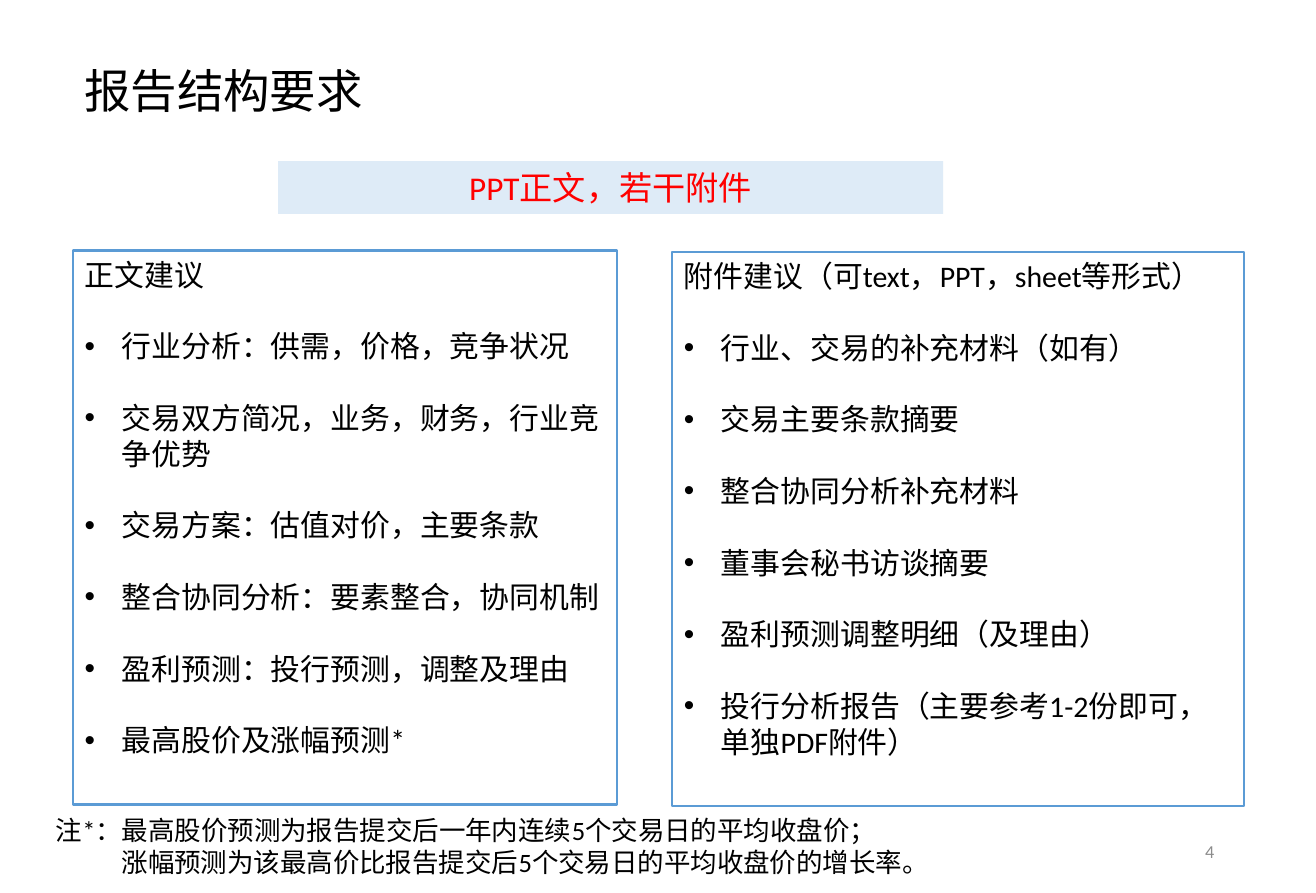
from dataclasses import dataclass

from lxml.etree import SubElement
from pptx import Presentation
from pptx.dml.color import RGBColor
from pptx.enum.shapes import MSO_SHAPE
from pptx.enum.text import MSO_ANCHOR, PP_ALIGN
from pptx.oxml.ns import qn
from pptx.slide import Slide
from pptx.text.text import _Paragraph as Para
from pptx.util import Cm, Pt

INDENT = 0.79


@dataclass
class Block:
    left: float
    top: float
    width: float
    height: float
    lines: list[str]
    size: int
    color: str = "000000"
    font: str = "Calibri"
    align: PP_ALIGN = PP_ALIGN.LEFT
    anchor: MSO_ANCHOR = MSO_ANCHOR.TOP
    fill: str = ""
    edge: str = ""
    listed: bool = False
    shift: float = 0


BLOCKS = [
    Block(1.55, 1.19, 23.14, 1.45, ["报告结构要求"], 28, font="Arial"),
    Block(19.79, 17.6, 6.3, 1.02, ["4"], 11, "8C8C8C",
          align=PP_ALIGN.RIGHT, anchor=MSO_ANCHOR.MIDDLE),
    Block(1.55, 5.33, 11.58, 11.79, [
        "正文建议",
        "行业分析：供需，价格，竞争状况",
        "交易双方简况，业务，财务，行业竞争优势",
        "交易方案：估值对价，主要条款",
        "整合协同分析：要素整合，协同机制",
        "盈利预测：投行预测，调整及理由",
        "最高股价及涨幅预测*",
    ], 18, edge="5B9BD5", listed=True),
    Block(5.92, 3.43, 14.15, 1.12, ["PPT正文，若干附件"], 20, "FF0000",
          align=PP_ALIGN.CENTER, fill="DEEBF7"),
    Block(14.3, 5.36, 12.17, 11.79, [
        "附件建议（可text，PPT，sheet等形式）",
        "行业、交易的补充材料（如有）",
        "交易主要条款摘要",
        "整合协同分析补充材料",
        "董事会秘书访谈摘要",
        "盈利预测调整明细（及理由）",
        "投行分析报告（主要参考1-2份即可，单独PDF附件）",
    ], 18, edge="5B9BD5", listed=True),
    Block(0.94, 17.2, 19.25, 1.63, [
        "注*：最高股价预测为报告提交后一年内连续5个交易日的平均收盘价；",
        "涨幅预测为该最高价比报告提交后5个交易日的平均收盘价的增长率。",
    ], 16, shift=1.4),
]


def paint(code: str) -> RGBColor:
    return RGBColor.from_string(code)


def indent(para: Para, left: float, first: float = 0) -> None:
    props = para._p.get_or_add_pPr()
    props.set("marL", str(Cm(left)))
    props.set("indent", str(Cm(first)))


def bullet(para: Para) -> None:
    para.space_before = Pt(21.6)
    indent(para, INDENT, -INDENT)
    props = para._p.get_or_add_pPr()
    SubElement(props, qn("a:buFont")).set("typeface", "Arial")
    SubElement(props, qn("a:buChar")).set("char", "•")


def draw(slide: Slide, block: Block) -> None:
    place = (Cm(block.left), Cm(block.top), Cm(block.width), Cm(block.height))
    if block.fill or block.edge:
        shape = slide.shapes.add_shape(MSO_SHAPE.RECTANGLE, *place)
        shape.shadow.inherit = False
    else:
        shape = slide.shapes.add_textbox(*place)
    if block.fill:
        shape.fill.solid()
        shape.fill.fore_color.rgb = paint(block.fill)
    else:
        shape.fill.background()
    if block.edge:
        shape.line.color.rgb = paint(block.edge)
        shape.line.width = Pt(1.5)
    else:
        shape.line.fill.background()

    frame = shape.text_frame
    frame.word_wrap = True
    frame.vertical_anchor = block.anchor
    frame.text = "\n".join(block.lines)
    for rank, para in enumerate(frame.paragraphs):
        para.alignment = block.align
        if rank and block.listed:
            bullet(para)
        elif rank and block.shift:
            indent(para, block.shift)
        for run in para.runs:
            run.font.size = Pt(block.size)
            run.font.name = block.font
            run.font.color.rgb = paint(block.color)


def main() -> None:
    deck = Presentation()
    deck.slide_width = Cm(28)
    deck.slide_height = Cm(19)
    slide = deck.slides.add_slide(deck.slide_layouts[6])
    for block in BLOCKS:
        draw(slide, block)
    deck.save("out.pptx")


if __name__ == "__main__":
    main()
